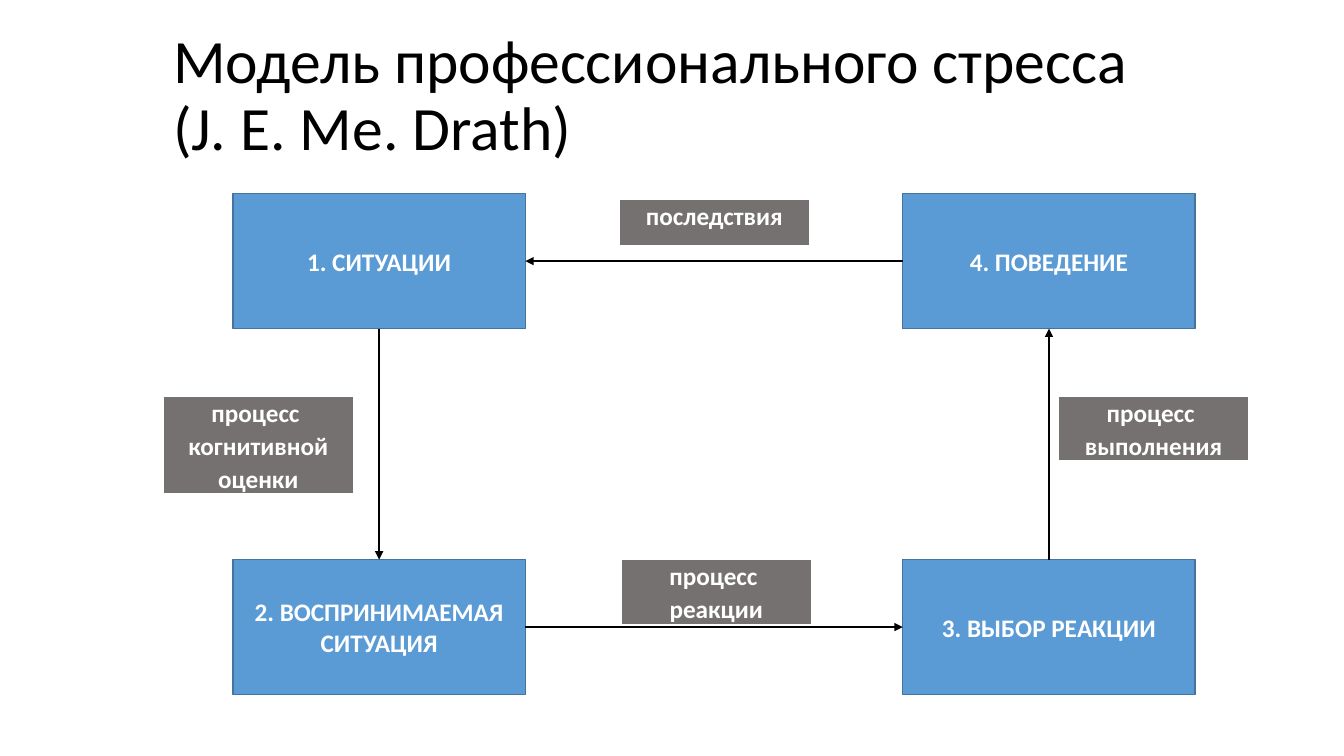
from lxml import etree
from pptx import Presentation
from pptx import util as u
from pptx.dml.color import RGBColor
from pptx.enum import shapes, text
from pptx.oxml import ns

TOP, LEFT, BOTTOM, RIGHT = range(4)


def colour(value):
    return RGBColor.from_string(value)


class Diagram:
    font = "Calibri"
    white, black = "FFFFFF", "000000"
    box_fill, box_line, label_fill = "5B9BD5", "43739E", "767171"
    box_size = u.Cm(7.37), u.Cm(3.4)
    label_width = u.Cm(4.8)

    def __init__(self, slide):
        self.slide = slide

    def add_words(self, para, words, size, tint, bold=False):
        span = para.add_run()
        span.text = words
        span.font.name = self.font
        span.font.size = u.Pt(size)
        span.font.bold = bold
        span.font.color.rgb = colour(tint)

    def title(self, lines, left, top, width, height):
        title = self.slide.shapes.title
        title.left, title.top = u.Cm(left), u.Cm(top)
        title.width, title.height = u.Cm(width), u.Cm(height)
        frame = title.text_frame
        frame.word_wrap = True
        frame.auto_size = text.MSO_AUTO_SIZE.NONE
        frame.vertical_anchor = text.MSO_ANCHOR.MIDDLE
        para = frame.paragraphs[0]
        para.alignment = text.PP_ALIGN.LEFT
        para.line_spacing = 0.9
        for index, line in enumerate(lines):
            if index:
                para.add_line_break()
            self.add_words(para, line, 44, self.black)

    def box(self, words, left, top):
        box = self.slide.shapes.add_shape(
            shapes.MSO_SHAPE.RECTANGLE, u.Cm(left), u.Cm(top), *self.box_size)
        box.shadow.inherit = False
        box.fill.solid()
        box.fill.fore_color.rgb = colour(self.box_fill)
        box.line.color.rgb = colour(self.box_line)
        box.line.width = u.Pt(1)
        frame = box.text_frame
        frame.word_wrap = True
        frame.vertical_anchor = text.MSO_ANCHOR.MIDDLE
        para = frame.paragraphs[0]
        para.alignment = text.PP_ALIGN.CENTER
        self.add_words(para, words, 18, self.white, True)
        return box

    def label(self, lines, left, top, height):
        table = self.slide.shapes.add_table(
            1, 1, u.Cm(left), u.Cm(top), self.label_width, u.Cm(height)).table
        table.first_row = table.horz_banding = False
        cell = table.cell(0, 0)
        cell.fill.solid()
        cell.fill.fore_color.rgb = colour(self.label_fill)
        cell.margin_left = cell.margin_right = u.Cm(0.18)
        cell.margin_top = cell.margin_bottom = 0
        self.borders(cell)
        frame = cell.text_frame
        for index, line in enumerate(lines):
            para = frame.add_paragraph() if index else frame.paragraphs[0]
            para.alignment = text.PP_ALIGN.CENTER
            para.line_spacing = 1.07
            self.add_words(para, line, 18, self.white, True)

    def borders(self, cell):
        props = cell._tc.get_or_add_tcPr()
        for index, (side, width) in enumerate(zip("LRTB", (1, 1, 1, 3))):
            line = etree.Element(ns.qn("a:ln" + side), w=str(u.Pt(width)))
            fill = etree.SubElement(line, ns.qn("a:solidFill"))
            etree.SubElement(fill, ns.qn("a:srgbClr"), val=self.white)
            props.insert(index, line)

    def arrow(self, start, start_side, end, end_side):
        arrow = self.slide.shapes.add_connector(
            shapes.MSO_CONNECTOR.STRAIGHT, 0, 0, 0, 0)
        arrow.begin_connect(start, start_side)
        arrow.end_connect(end, end_side)
        arrow.line.color.rgb = colour(self.black)
        arrow.line.width = u.Pt(1)
        props = arrow._element.spPr
        etree.SubElement(props.find(ns.qn("a:ln")), ns.qn("a:tailEnd"), type="triangle")
        etree.SubElement(props, ns.qn("a:effectLst"))


def main():
    deck = Presentation()
    deck.slide_width, deck.slide_height = u.Cm(33.87), u.Cm(19.05)
    page = Diagram(deck.slides.add_slide(deck.slide_layouts[5]))
    page.title(["Модель профессионального стресса ", "(J. E. Me. Drath)"],
               4.11, 0, 27.84, 4.88)

    page.label(["процесс ", "когнитивной оценки"], 4.11, 9.98, 2.41)
    page.label(["процесс ", "реакции"], 15.65, 14.1, 1.6)
    page.label(["процесс ", "выполнения"], 26.67, 9.98, 1.6)
    page.label(["последствия"], 15.6, 5.03, 1.19)

    left, right, upper, lower = 5.87, 22.75, 4.88, 14.1
    situation = page.box("1. СИТУАЦИИ", left, upper)
    perception = page.box("2. ВОСПРИНИМАЕМАЯ СИТУАЦИЯ", left, lower)
    choice = page.box("3. ВЫБОР РЕАКЦИИ", right, lower)
    behaviour = page.box("4. ПОВЕДЕНИЕ", right, upper)

    page.arrow(situation, BOTTOM, perception, TOP)
    page.arrow(perception, RIGHT, choice, LEFT)
    page.arrow(choice, TOP, behaviour, BOTTOM)
    page.arrow(behaviour, LEFT, situation, RIGHT)
    deck.save("out.pptx")


if __name__ == "__main__":
    main()
